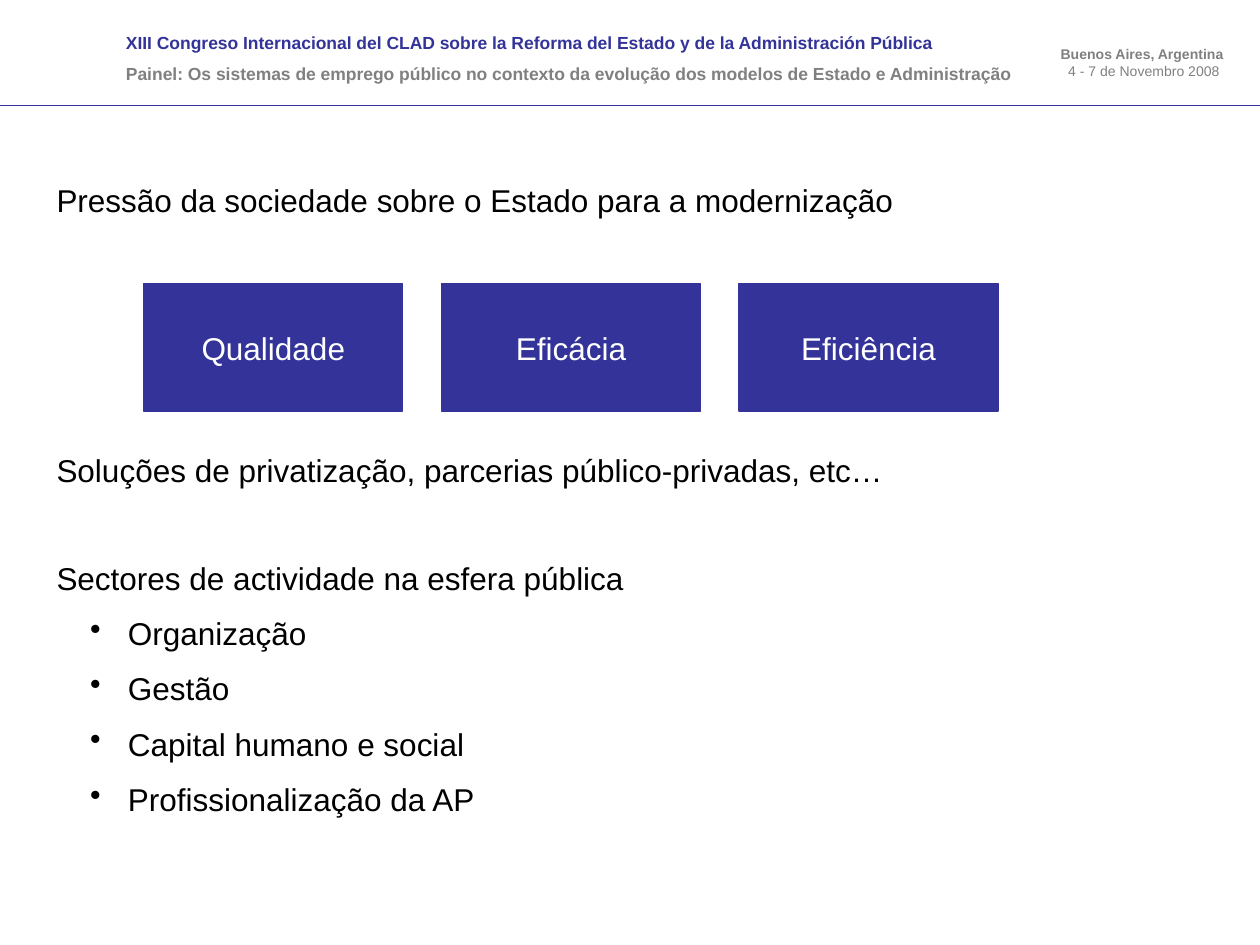
from lxml import etree
from pptx import Presentation
from pptx.dml.color import RGBColor
from pptx.enum.shapes import MSO_CONNECTOR, MSO_SHAPE
from pptx.enum.text import MSO_ANCHOR, PP_ALIGN
from pptx.oxml.ns import qn
from pptx.util import Cm, Pt

LEFT, CENTER, RIGHT = PP_ALIGN.LEFT, PP_ALIGN.CENTER, PP_ALIGN.RIGHT
TOP, MIDDLE = MSO_ANCHOR.TOP, MSO_ANCHOR.MIDDLE
BLUE = RGBColor(0x33, 0x33, 0x99)
GRAY = RGBColor(0x80, 0x80, 0x80)
BLACK = RGBColor(0, 0, 0)
WHITE = RGBColor(0xFF, 0xFF, 0xFF)

CONGRESS = "XIII Congreso Internacional del CLAD sobre la Reforma del Estado y de la Administración Pública"
PANEL = "Painel: Os sistemas de emprego público no contexto da evolução dos modelos de Estado e Administração"
PLACE = "Buenos Aires, Argentina"
DATES = "4 - 7 de Novembro 2008 "
GOALS = ["Qualidade", "Eficácia", "Eficiência"]
STATEMENTS = [
    ("Pressão da sociedade sobre o Estado para a modernização", 0),
    ("Soluções de privatização, parcerias público-privadas, etc…", 5),
    ("Sectores de actividade na esfera pública", 2),
]
SECTORS = ["Organização", "Gestão", "Capital humano e social", "Profissionalização da AP"]

LINE_HEIGHT, LINE_PITCH = 20.7, 30.6
GOAL_LEFT, GOAL_PITCH, GOAL_WIDTH = 2.9, 6, 5.22


def add_box(page, left, top, width, height, anchor=TOP, wrap=True):
    frame = page.shapes.add_textbox(Cm(left), Cm(top), Cm(width), Cm(height)).text_frame
    frame.word_wrap = wrap
    frame.vertical_anchor = anchor
    return frame


def add_text(frame, text, size=18, color=BLACK, bold=False, align=LEFT, before=0, bullet=False):
    para = frame.paragraphs[0] if not frame.text else frame.add_paragraph()
    if bullet:
        properties = para._p.get_or_add_pPr()
        properties.set("marL", str(Cm(1.44)))
        properties.set("indent", str(Cm(-0.76)))
        etree.SubElement(properties, qn("a:buChar"), char="•")
    para.alignment = align
    para.space_before = Pt(before)
    span = para.add_run()
    span.text = text
    span.font.name = "Arial"
    span.font.size = Pt(size)
    span.font.bold = bold
    span.font.color.rgb = color


def add_header(page):
    title = add_box(page, 2.29, 0.53, 18.75, 1.32)
    add_text(title, CONGRESS, size=10, color=BLUE, bold=True)
    add_text(title, PANEL, size=10, color=GRAY, bold=True, before=5.6)
    venue = add_box(page, 21.11, 0.79, 3.81, 0.94, anchor=MIDDLE, wrap=False)
    add_text(venue, PLACE, size=8, color=GRAY, bold=True, align=RIGHT)
    add_text(venue, DATES, size=8, color=GRAY, align=RIGHT)
    rule = page.shapes.add_connector(MSO_CONNECTOR.STRAIGHT, Cm(0), Cm(2.13), Cm(25.4), Cm(2.13))
    rule.line.color.rgb = BLUE
    rule.line.width = Pt(0.75)
    etree.SubElement(rule._element.spPr, qn("a:effectLst"))


def add_body(page):
    body = add_box(page, 0.89, 3.53, 23.19, 13.64)
    for text, lines in STATEMENTS:
        before = round(lines * LINE_PITCH - LINE_HEIGHT, 2) if lines else 0
        add_text(body, text, before=before)
    for sector in SECTORS:
        add_text(body, sector, before=round(LINE_PITCH - LINE_HEIGHT, 2), bullet=True)


def add_goals(page):
    for index, goal in enumerate(GOALS):
        box = page.shapes.add_shape(
            MSO_SHAPE.RECTANGLE, Cm(GOAL_LEFT + index * GOAL_PITCH), Cm(5.72), Cm(GOAL_WIDTH), Cm(2.57))
        box.shadow.inherit = False
        box.fill.solid()
        box.fill.fore_color.rgb = BLUE
        box.line.color.rgb = BLUE
        box.line.width = Pt(0.75)
        add_text(box.text_frame, goal, color=WHITE, align=CENTER)


def main():
    deck = Presentation()
    deck.slide_width, deck.slide_height = Cm(25.4), Cm(19.05)
    page = deck.slides.add_slide(deck.slide_layouts[6])
    add_header(page)
    add_body(page)
    add_goals(page)
    deck.save("out.pptx")


if __name__ == "__main__":
    main()
